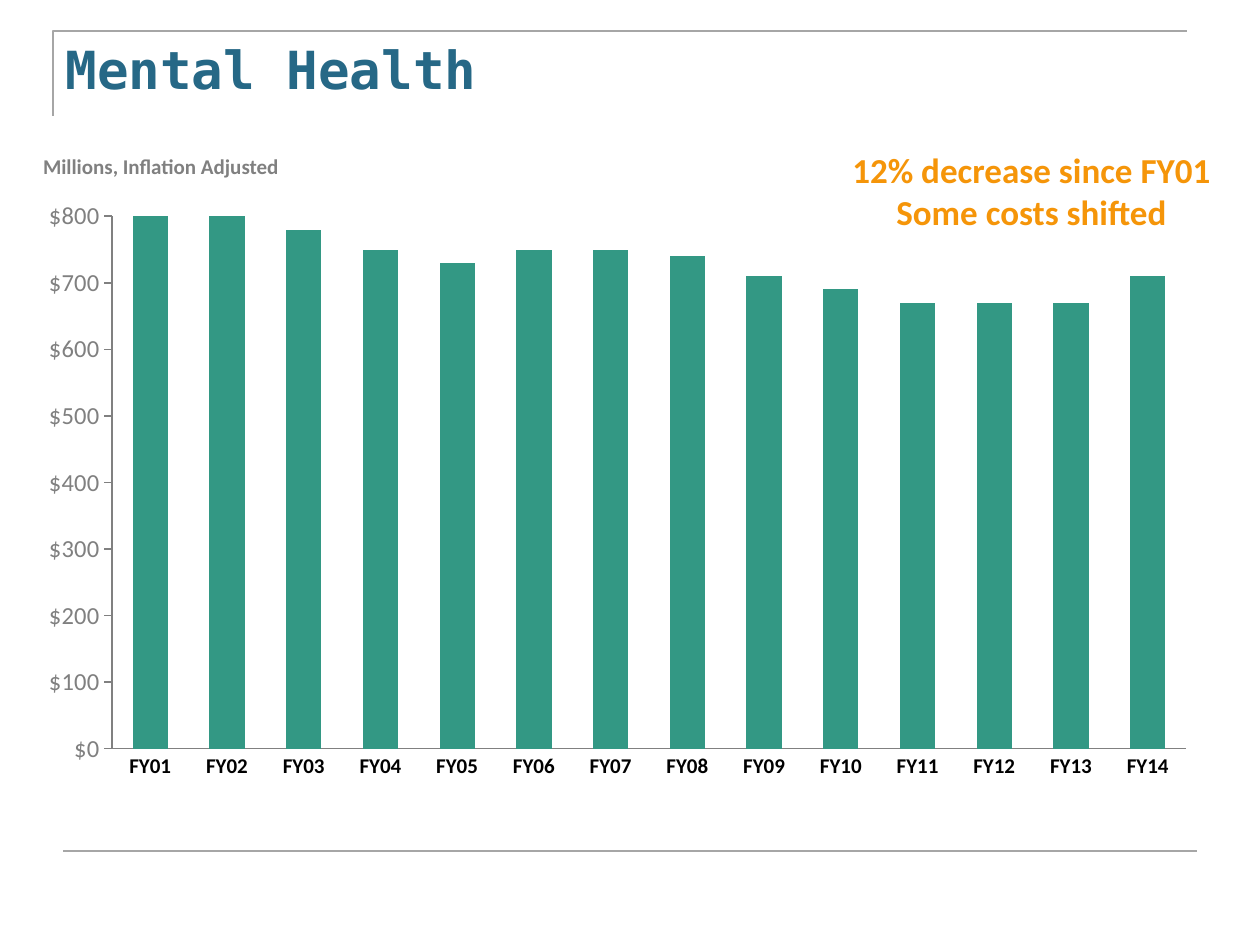
from lxml.etree import SubElement
from pptx import Presentation
from pptx.chart.data import CategoryChartData
from pptx.dml.color import RGBColor
from pptx.enum.chart import XL_CHART_TYPE, XL_TICK_MARK
from pptx.enum.shapes import MSO_CONNECTOR, MSO_SHAPE
from pptx.enum.text import MSO_ANCHOR, PP_ALIGN
from pptx.oxml import parse_xml
from pptx.oxml.ns import nsdecls, qn
from pptx.util import Emu, Pt

COLORS = {
    "title": "266886",
    "rule": "A6A6A6",
    "bar": "339884",
    "axis": "808080",
    "label": "000000",
    "callout": "F59509",
    "background": "FFFFFF",
}
SPENDING = [800, 800, 780, 750, 730, 750, 750, 740, 710, 690, 670, 670, 670, 710]
PLOT_LAYOUT = {"x": 0.092, "y": 0.033, "w": 0.899, "h": 0.907}


def px(value):
    return Emu(round(value * 914400 / 126))


def box(*lengths):
    return [px(length) for length in lengths]


def color(name):
    return RGBColor.from_string(COLORS[name])


def style_font(font, size, color_name, bold=True, name="Calibri"):
    font.name = name
    font.size = Pt(size)
    font.bold = bold
    font.color.rgb = color(color_name)


def style_line(line, color_name, width):
    line.color.rgb = color(color_name)
    line.width = Pt(width)


def write_text(shape, text, alignment, size, color_name, name="Calibri"):
    shape.text_frame.text = text
    paragraph = shape.text_frame.paragraphs[0]
    paragraph.alignment = alignment
    style_font(paragraph.runs[0].font, size, color_name, name=name)


def add_title_bracket(slide):
    builder = slide.shapes.build_freeform(px(53), px(116))
    builder.add_line_segments([box(53, 31), box(1187, 31)], close=False)
    bracket = builder.convert_to_shape()
    bracket.shadow.inherit = False
    bracket.fill.background()
    style_line(bracket.line, "rule", 1.5)


def add_footer_rule(slide):
    rule = slide.shapes.add_connector(MSO_CONNECTOR.STRAIGHT, *box(63, 851, 1197, 851))
    SubElement(rule._element.spPr, qn("a:effectLst"))
    style_line(rule.line, "rule", 1.5)


def set_title(slide, text):
    title = slide.shapes.title
    title.left, title.top, title.width, title.height = box(53, 31, 1134, 158)
    title.text_frame.vertical_anchor = MSO_ANCHOR.TOP
    write_text(title, text, PP_ALIGN.LEFT, 30, "title", "DejaVu Sans Mono")


def set_plot_layout(chart):
    plot_area = chart._chartSpace.chart.plotArea
    for layout in plot_area.findall(qn("c:layout")):
        plot_area.remove(layout)
    sizes = "".join(f'<c:{key} val="{value}"/>' for key, value in PLOT_LAYOUT.items())
    plot_area.insert(0, parse_xml(
        f'<c:layout {nsdecls("c")}><c:manualLayout><c:layoutTarget val="inner"/>'
        f'<c:xMode val="edge"/><c:yMode val="edge"/>{sizes}</c:manualLayout></c:layout>'
    ))


def style_axis(axis, tick_mark, size, color_name, bold):
    axis.has_major_gridlines = False
    axis.major_tick_mark = tick_mark
    axis.minor_tick_mark = XL_TICK_MARK.NONE
    style_line(axis.format.line, "axis", 1)
    style_font(axis.tick_labels.font, size, color_name, bold)


def add_spending_chart(slide):
    data = CategoryChartData()
    data.categories = [f"FY{year:02}" for year in range(1, len(SPENDING) + 1)]
    data.add_series("Series 1", SPENDING)
    chart = slide.shapes.add_chart(
        XL_CHART_TYPE.COLUMN_STACKED, *box(2, 197, 1195, 587), data
    ).chart
    chart.has_title = False
    chart.has_legend = False
    style_font(chart.font, 18, "label", False)
    set_plot_layout(chart)
    plot = chart.plots[0]
    plot.gap_width = 118
    plot.overlap = 100
    plot.vary_by_categories = False
    fill = plot.series[0].format.fill
    fill.solid()
    fill.fore_color.rgb = color("bar")
    style_axis(chart.category_axis, XL_TICK_MARK.NONE, 12, "label", True)
    value_axis = chart.value_axis
    style_axis(value_axis, XL_TICK_MARK.OUTSIDE, 14, "axis", False)
    value_axis.minimum_scale = 0
    value_axis.maximum_scale = 800
    value_axis.major_unit = 100
    value_axis.tick_labels.number_format = '"$"#,##0'
    value_axis.tick_labels.number_format_is_linked = False


def add_unit_label(slide, text):
    label = slide.shapes.add_textbox(*box(28, 147, 266, 44))
    label.text_frame.word_wrap = False
    write_text(label, text, PP_ALIGN.CENTER, 12, "axis")


def add_callout(slide, text):
    callout = slide.shapes.add_shape(MSO_SHAPE.RECTANGLE, *box(832, 142, 399, 97))
    callout.shadow.inherit = False
    callout.fill.solid()
    callout.fill.fore_color.rgb = color("background")
    callout.line.fill.background()
    callout.text_frame.word_wrap = True
    callout.text_frame.vertical_anchor = MSO_ANCHOR.MIDDLE
    write_text(callout, text, PP_ALIGN.CENTER, 20, "callout")


def main():
    presentation = Presentation()
    presentation.slide_width, presentation.slide_height = box(1260, 945)
    slide = presentation.slides.add_slide(presentation.slide_layouts[5])
    add_title_bracket(slide)
    add_footer_rule(slide)
    set_title(slide, "Mental Health")
    add_spending_chart(slide)
    add_unit_label(slide, "Millions, Inflation Adjusted")
    add_callout(slide, "12% decrease since FY01 Some costs shifted")
    presentation.save("out.pptx")


if __name__ == "__main__":
    main()
